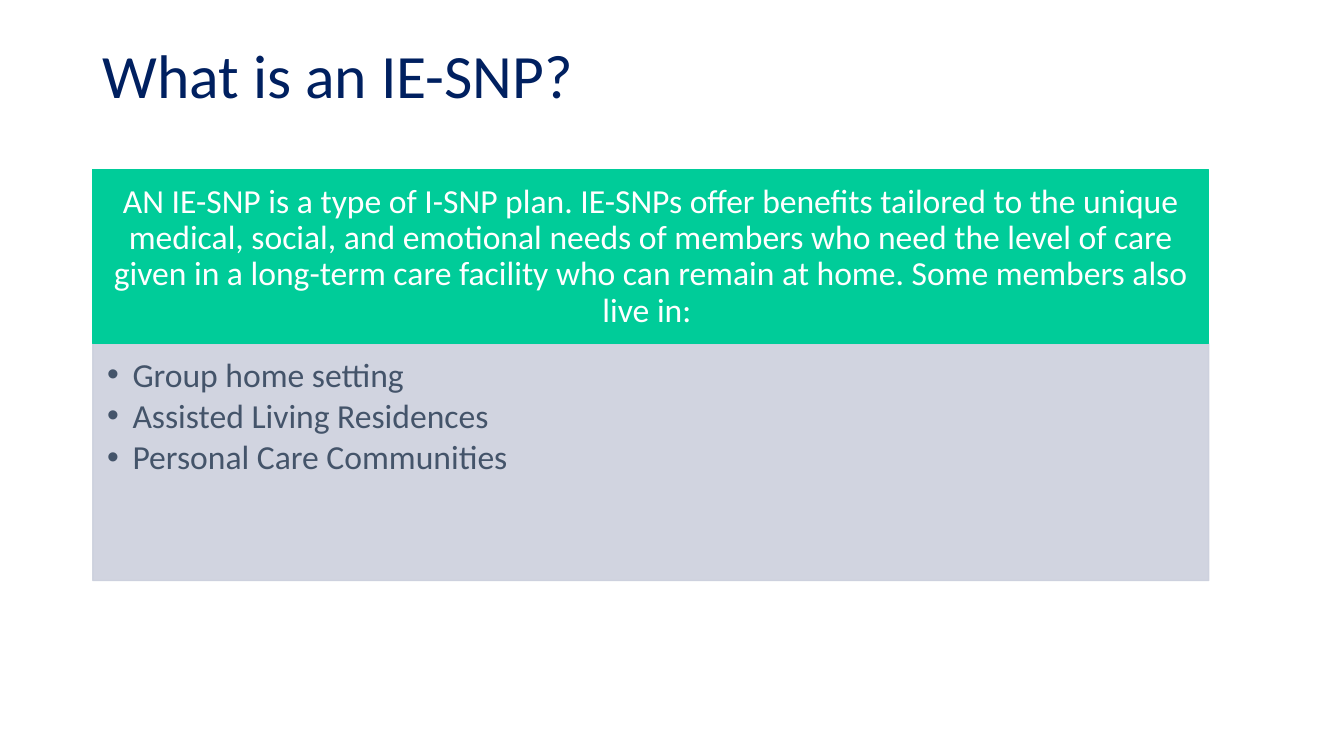
from lxml.etree import SubElement
from pptx import Presentation
from pptx.dml.color import RGBColor
from pptx.enum.shapes import MSO_SHAPE
from pptx.enum.text import MSO_ANCHOR, MSO_AUTO_SIZE, PP_ALIGN
from pptx.oxml.ns import qn
from pptx.util import Cm, Pt

NAVY = RGBColor(0x00, 0x20, 0x60)
GREEN = RGBColor(0x00, 0xCC, 0x99)
LAVENDER = RGBColor(0xCC, 0xD0, 0xDD)
SLATE = RGBColor(0x44, 0x54, 0x6A)
WHITE = RGBColor(0xFF, 0xFF, 0xFF)

TITLE = "What is an IE-SNP?"
DEFINITION = (
    "AN IE-SNP is a type of I-SNP plan. IE-SNPs offer benefits tailored to the "
    "unique medical, social, and emotional needs of members who need the level of "
    "care given in a long-term care facility who can remain at home. Some members "
    "also live in: "
)
SETTINGS = ["Group home setting", "Assisted Living Residences", "Personal Care Communities"]


def apply_format(target, values):
    """Set every attribute of the target from a dict."""
    for name, value in values.items():
        setattr(target, name, value)


def place(shape, box):
    """Move a shape to a box of left, top, width and height in centimetres."""
    apply_format(shape, dict(zip(("left", "top", "width", "height"), map(Cm, box))))


def format_frame(frame, anchor, insets):
    """Set the anchor and the left, top, right and bottom insets of a text frame."""
    sides = ("margin_left", "margin_top", "margin_right", "margin_bottom")
    apply_format(frame, dict(zip(sides, map(Cm, insets))))
    apply_format(frame, {"word_wrap": True, "auto_size": MSO_AUTO_SIZE.NONE,
                         "vertical_anchor": anchor})


def format_para(para, size, colour, align, after):
    """Set the spacing, alignment and font of a paragraph."""
    apply_format(para, {"alignment": align, "line_spacing": 0.9,
                        "space_before": Pt(0), "space_after": Pt(after)})
    apply_format(para.font, {"name": "Calibri", "size": Pt(size)})
    para.font.color.rgb = colour


def paint(shape, colour, line_width):
    """Give a shape a fill and an outline of one colour."""
    shape.fill.solid()
    shape.fill.fore_color.rgb = colour
    shape.line.color.rgb = colour
    shape.line.width = Pt(line_width)


def add_title(page, box):
    """Write the heading in the title placeholder."""
    title = page.shapes.title
    place(title, box)
    title.text_frame.text = TITLE
    format_frame(title.text_frame, MSO_ANCHOR.TOP, (0.25, 0.13, 0.25, 0.13))
    format_para(title.text_frame.paragraphs[0], 44, NAVY, PP_ALIGN.LEFT, 0)


def add_definition(page, box):
    """Draw the green panel with the definition."""
    panel = page.shapes.add_shape(MSO_SHAPE.RECTANGLE, *map(Cm, box))
    panel.shadow.inherit = False
    paint(panel, GREEN, 0.5)
    panel.text_frame.text = DEFINITION
    format_frame(panel.text_frame, MSO_ANCHOR.MIDDLE, (0.48, 0.28, 0.48, 0.28))
    format_para(panel.text_frame.paragraphs[0], 24, WHITE, PP_ALIGN.CENTER, 8.4)


def add_settings(page, box):
    """Write the bulleted settings in the tinted body placeholder."""
    body = page.placeholders[1]
    place(body, box)
    paint(body, LAVENDER, 1)
    for colour in body.element.spPr.iter(qn("a:srgbClr")):
        SubElement(colour, qn("a:alpha"), val="90000")
    body.text_frame.text = "\n".join(SETTINGS)
    format_frame(body.text_frame, MSO_ANCHOR.TOP, (0.36, 0.36, 0.48, 0.53))
    for para in body.text_frame.paragraphs:
        properties = para._p.get_or_add_pPr()
        properties.set("marL", str(Cm(0.64)))
        properties.set("indent", str(Cm(-0.64)))
        SubElement(properties, qn("a:buChar"), char="•")
        format_para(para, 24, SLATE, PP_ALIGN.LEFT, 3.6)


def main():
    """Build the slide and save it."""
    deck = Presentation()
    apply_format(deck, {"slide_width": Cm(33.87), "slide_height": Cm(19.05)})
    page = deck.slides.add_slide(deck.slide_layouts[1])
    left, top, width, definition_height = 2.34, 4.28, 28.12, 4.38
    add_title(page, (left, 1.02, 29.21, 2.36))
    add_definition(page, (left, top, width, definition_height))
    add_settings(page, (left, top + definition_height, width, 5.97))
    deck.save("out.pptx")


if __name__ == "__main__":
    main()
